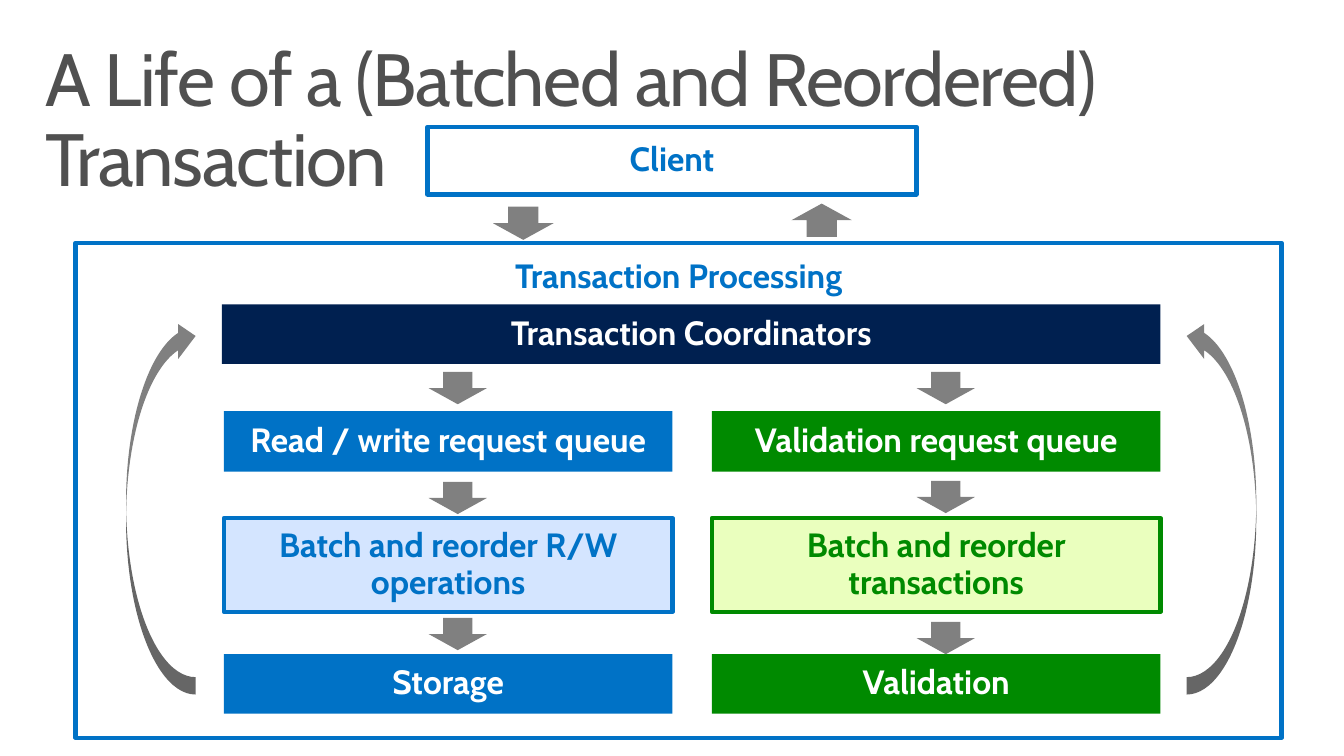
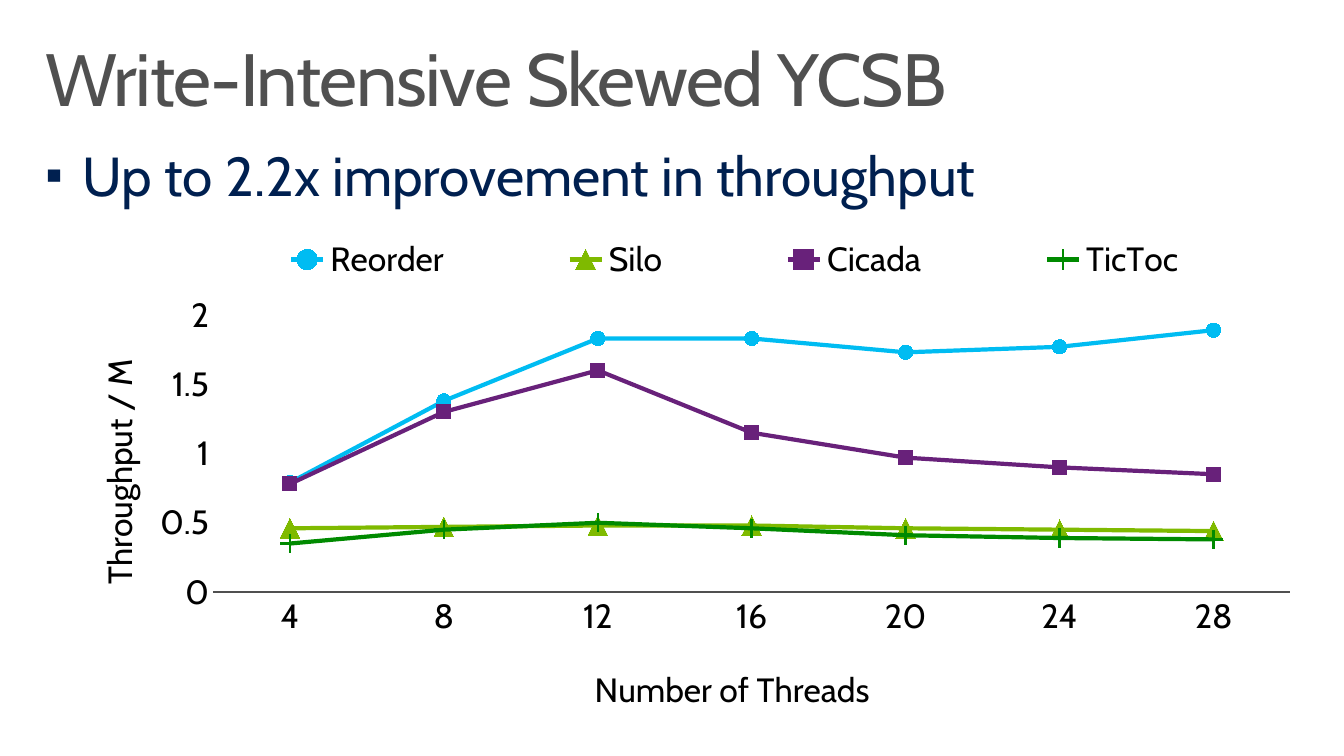
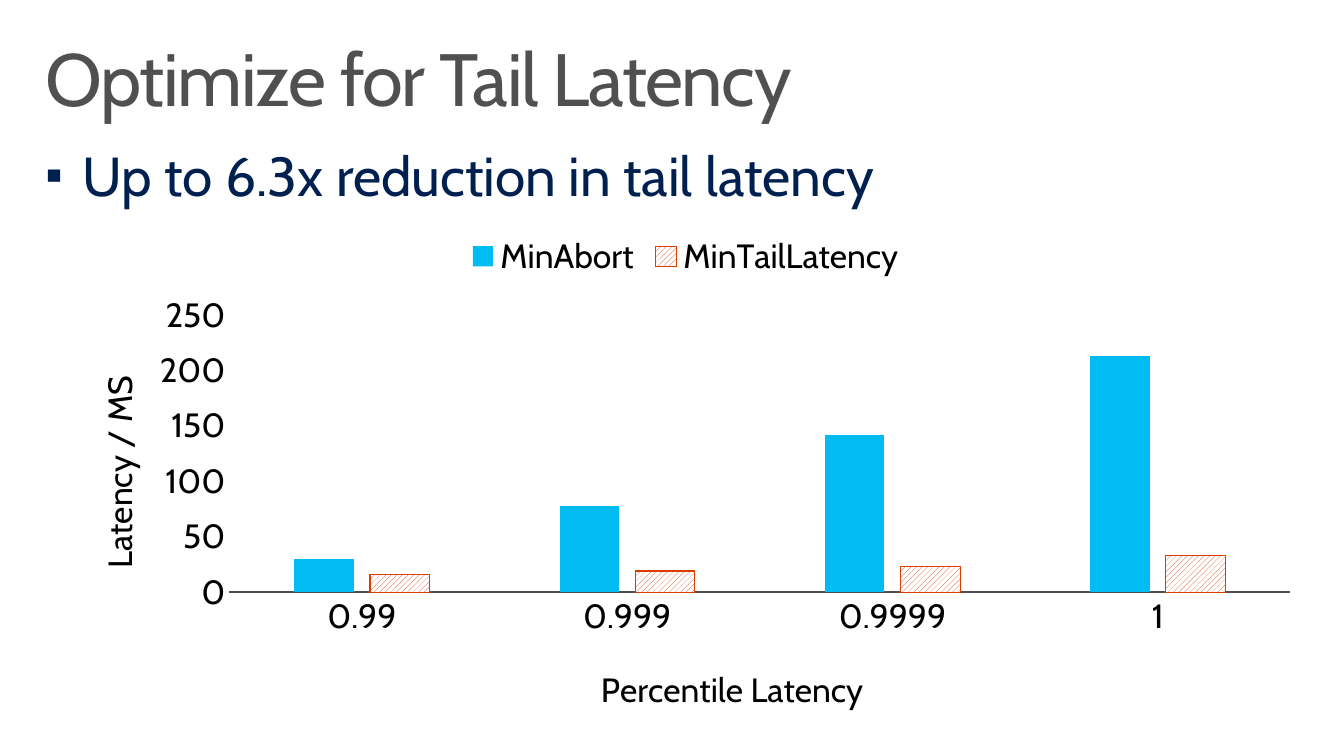
from dataclasses import dataclass

from lxml import etree
from pptx import Presentation
from pptx.chart.data import CategoryChartData
from pptx.dml.color import RGBColor
from pptx.enum.chart import XL_CHART_TYPE, XL_LEGEND_POSITION, XL_MARKER_STYLE, XL_TICK_MARK
from pptx.enum.dml import MSO_PATTERN
from pptx.enum.shapes import MSO_SHAPE
from pptx.enum.text import MSO_ANCHOR, MSO_AUTO_SIZE, PP_ALIGN
from pptx.oxml.ns import qn
from pptx.util import Inches, Pt

TITLE_ONLY, TITLE_AND_BODY = 5, 1
TOP, MIDDLE = MSO_ANCHOR.TOP, MSO_ANCHOR.MIDDLE
RECTANGLE = MSO_SHAPE.RECTANGLE
DOWN, UP = MSO_SHAPE.DOWN_ARROW, MSO_SHAPE.UP_ARROW
CURVED_LEFT, CURVED_RIGHT = MSO_SHAPE.CURVED_LEFT_ARROW, MSO_SHAPE.CURVED_RIGHT_ARROW
NO_TICKS = XL_TICK_MARK.NONE
LINE_CHART, COLUMN_CHART = XL_CHART_TYPE.LINE_MARKERS, XL_CHART_TYPE.COLUMN_CLUSTERED
CIRCLE, TRIANGLE = XL_MARKER_STYLE.CIRCLE, XL_MARKER_STYLE.TRIANGLE
SQUARE, PLUS = XL_MARKER_STYLE.SQUARE, XL_MARKER_STYLE.PLUS


@dataclass(frozen=True)
class Theme:
    """Colours, font and type sizes shared by all slides."""

    font: str = "Cabin"
    title_size: float = 52.9
    body_size: float = 39.2
    label_size: float = 24
    outline: float = 3
    gray: str = "505050"
    arrow: str = "808080"
    navy: str = "002050"
    blue: str = "0072C6"
    pale_blue: str = "D4E5FF"
    green: str = "008A00"
    pale_green: str = "EAFFBE"
    cyan: str = "00BCF2"
    lime: str = "7FBA00"
    purple: str = "68217A"
    orange: str = "DC3C00"
    white: str = "FFFFFF"
    black: str = "000000"


THEME = Theme()


def rgb(code):
    """Turn a hex code into a colour."""
    return RGBColor.from_string(code)


def place(shape, left, top, width, height):
    """Set a shape's position and size in inches."""
    shape.left, shape.top = Inches(left), Inches(top)
    shape.width, shape.height = Inches(width), Inches(height)


def set_font(font, size, color, bold=False):
    """Apply the theme font with a size and colour."""
    font.name = THEME.font
    font.size = Pt(size)
    font.bold = bold
    font.color.rgb = rgb(color)


def set_frame(frame, across, down, anchor):
    """Set insets, wrapping and anchor of a text frame."""
    frame.margin_left = frame.margin_right = Inches(across)
    frame.margin_top = frame.margin_bottom = Inches(down)
    frame.word_wrap = True
    frame.auto_size = MSO_AUTO_SIZE.NONE
    frame.vertical_anchor = anchor


def fill_placeholder(shape, text, size, color):
    """Write one left-aligned paragraph into a placeholder and return it."""
    frame = shape.text_frame
    frame.text = text
    set_frame(frame, 0.16, 0.1, TOP)
    para = frame.paragraphs[0]
    para.alignment = PP_ALIGN.LEFT
    para.space_before = Pt(0)
    set_font(para.runs[0].font, size, color)
    return para


def add_page(deck, layout, title):
    """Add a slide with its styled title."""
    page = deck.slides.add_slide(deck.slide_layouts[layout])
    place(page.shapes.title, 0.29, 0.32, 12.75, 0.98)
    para = fill_placeholder(page.shapes.title, title, THEME.title_size, THEME.gray)
    para.line_spacing = 0.9
    para.runs[0].font._element.set("spc", "-100")
    return page


def add_bullet(page, text):
    """Fill the body placeholder with one square-bulleted line."""
    body = page.placeholders[1]
    place(body, 0.29, 1.3, 12.74, 2.6)
    para = fill_placeholder(body, text, THEME.body_size, THEME.navy)
    props = para._p.get_or_add_pPr()
    props.set("marL", str(Inches(0.37)))
    props.set("indent", str(Inches(-0.37)))
    color = etree.SubElement(props, qn("a:buClr"))
    etree.SubElement(color, qn("a:srgbClr")).set("val", THEME.navy)
    etree.SubElement(props, qn("a:buSzPct")).set("val", "90000")
    etree.SubElement(props, qn("a:buFont")).set("typeface", "Arial")
    etree.SubElement(props, qn("a:buChar")).set("char", "▪")


def add_box(page, text, bounds, fill, color=THEME.white, line=None, anchor=MIDDLE):
    """Add a labelled rectangle."""
    box = page.shapes.add_shape(RECTANGLE, *map(Inches, bounds))
    box.shadow.inherit = False
    box.fill.solid()
    box.fill.fore_color.rgb = rgb(fill)
    if line:
        box.line.color.rgb = rgb(line)
        box.line.width = Pt(THEME.outline)
    else:
        box.line.fill.background()
    frame = box.text_frame
    frame.text = text
    set_frame(frame, 0.2, 0.16, anchor)
    para = frame.paragraphs[0]
    para.alignment = PP_ALIGN.CENTER
    para.line_spacing = 0.9
    set_font(para.runs[0].font, THEME.label_size, color, bold=True)


def add_arrow(page, kind, left, top, width=0.58, height=0.32, rotation=0):
    """Add a plain gray block arrow."""
    arrow = page.shapes.add_shape(kind, *map(Inches, (left, top, width, height)))
    arrow.shadow.inherit = False
    arrow.rotation = rotation
    arrow.fill.solid()
    arrow.fill.fore_color.rgb = rgb(THEME.arrow)
    arrow.line.fill.background()


def set_layout(element, index, inner=False, **lengths):
    """Give a chart part a manual layout in fractions of the chart."""
    for old in element.findall(qn("c:layout")):
        element.remove(old)
    layout = etree.Element(qn("c:layout"))
    manual = etree.SubElement(layout, qn("c:manualLayout"))
    if inner:
        etree.SubElement(manual, qn("c:layoutTarget")).set("val", "inner")
    for mode in ("xMode", "yMode"):
        etree.SubElement(manual, qn(f"c:{mode}")).set("val", "edge")
    for name, value in lengths.items():
        etree.SubElement(manual, qn(f"c:{name}")).set("val", str(value))
    element.insert(index, layout)


def style_axis(axis, title, x, y):
    """Style an axis and place its title."""
    axis.has_major_gridlines = False
    axis.major_tick_mark = axis.minor_tick_mark = NO_TICKS
    set_font(axis.tick_labels.font, THEME.label_size, THEME.black)
    frame = axis.axis_title.text_frame
    frame.text = title
    set_font(frame.paragraphs[0].runs[0].font, THEME.label_size, THEME.black)
    set_layout(axis.axis_title._element, 1, x=x, y=y)


def add_chart(page, kind, categories, series, titles, title_places, plot_left, top_value, step):
    """Add a chart with the shared axes, legend and plot area."""
    data = CategoryChartData()
    data.categories = categories
    for name, values in series:
        data.add_series(name, values)
    bounds = map(Inches, (0.55, 2.2, 12.5, 5))
    chart = page.shapes.add_chart(kind, *bounds, data).chart
    chart.has_title = False
    set_font(chart.font, THEME.label_size, THEME.black)
    chart.has_legend = True
    chart.legend.position = XL_LEGEND_POSITION.TOP
    chart.legend.include_in_layout = False
    set_font(chart.legend.font, THEME.label_size, THEME.black)
    for axis, title, (x, y) in zip((chart.category_axis, chart.value_axis), titles, title_places):
        style_axis(axis, title, x, y)
    chart.category_axis.format.line.color.rgb = rgb(THEME.gray)
    chart.category_axis.format.line.width = Pt(2)
    value_axis = chart.value_axis
    value_axis.format.line.fill.background()
    value_axis.minimum_scale, value_axis.maximum_scale = 0, top_value
    value_axis.major_unit = step
    value_axis.tick_labels.number_format = "General"
    value_axis.tick_labels.number_format_is_linked = False
    turned = value_axis.axis_title.text_frame._txBody.bodyPr
    turned.set("rot", "-5400000")
    turned.set("vert", "horz")
    plot_area = chart._chartSpace.chart.plotArea
    set_layout(plot_area, 0, True, x=plot_left, y=0.185, w=round(0.98 - plot_left, 3), h=0.55)
    return chart


def build_transaction(deck):
    """Build the transaction flow diagram."""
    page = add_page(deck, TITLE_ONLY, "A Life of a (Batched and Reordered) Transaction")
    add_box(page, "Client", (4.24, 1.26, 4.85, 0.67), THEME.white, THEME.blue, THEME.blue)
    add_box(page, "Transaction Processing", (0.75, 2.41, 11.96, 4.91),
            THEME.white, THEME.blue, THEME.blue, TOP)
    add_box(page, "Transaction Coordinators", (2.2, 3.02, 9.31, 0.59), THEME.navy)
    columns = (
        (2.22, THEME.blue, THEME.pale_blue, (3.69, 4.78, 6.13),
         ("Read / write request queue", "Batch and reorder R/W operations", "Storage")),
        (7.06, THEME.green, THEME.pale_green, (3.69, 4.77, 6.17),
         ("Validation request queue", "Batch and reorder transactions", "Validation")),
    )
    width = 4.45
    for left, strong, pale, arrow_tops, (queue, batch, target) in columns:
        add_box(page, queue, (left, 4.08, width, 0.6), strong)
        add_box(page, batch, (left, 5.14, width, 0.93), pale, strong, strong)
        add_box(page, target, (left, 6.49, width, 0.59), strong)
        for top in arrow_tops:
            add_arrow(page, DOWN, left + 2.03, top)
    for kind, left in ((CURVED_RIGHT, 11.77), (CURVED_LEFT, 1.25)):
        add_arrow(page, kind, left, 3.16, 0.69, 3.73, 180)
    add_arrow(page, DOWN, 4.89, 2.05, 0.6, 0.33)
    add_arrow(page, UP, 7.85, 2.02, 0.6, 0.33)


def build_throughput(deck):
    """Build the throughput line chart."""
    page = add_page(deck, TITLE_AND_BODY, "Write-Intensive Skewed YCSB")
    add_bullet(page, "Up to 2.2x improvement in throughput")
    series = (
        ("Reorder", (0.79, 1.38, 1.83, 1.83, 1.73, 1.77, 1.89)),
        ("Silo", (0.46, 0.47, 0.48, 0.48, 0.46, 0.45, 0.44)),
        ("Cicada", (0.78, 1.3, 1.6, 1.15, 0.97, 0.9, 0.85)),
        ("TicToc", (0.35, 0.45, 0.5, 0.46, 0.41, 0.39, 0.38)),
    )
    chart = add_chart(page, LINE_CHART, range(4, 29, 4), series,
                      ("Number of Threads", "Throughput / M"),
                      ((0.423, 0.87), (0.027, 0.26)), 0.125, 2, 0.5)
    set_layout(chart.legend._element, 1, x=0.096, y=0.03, w=0.886, h=0.09)
    styles = (
        (THEME.cyan, CIRCLE, 10),
        (THEME.lime, TRIANGLE, 14),
        (THEME.purple, SQUARE, 10),
        (THEME.green, PLUS, 13),
    )
    for line, (color, marker, size) in zip(chart.plots[0].series, styles):
        line.smooth = False
        line.format.line.color.rgb = rgb(color)
        line.format.line.width = Pt(THEME.outline)
        line.marker.style = marker
        line.marker.size = size
        line.marker.format.fill.solid()
        line.marker.format.fill.fore_color.rgb = rgb(color)
        line.marker.format.line.color.rgb = rgb(color)


def build_latency(deck):
    """Build the tail latency column chart."""
    page = add_page(deck, TITLE_AND_BODY, "Optimize for Tail Latency")
    add_bullet(page, "Up to 6.3x reduction in tail latency")
    series = (("MinAbort", (30, 78, 142, 213)), ("MinTailLatency", (16, 19, 23, 33)))
    chart = add_chart(page, COLUMN_CHART, (0.99, 0.999, 0.9999, 1), series,
                      ("Percentile Latency", "Latency / MS"),
                      ((0.428, 0.87), (0.027, 0.294)), 0.138, 250, 50)
    labels = chart.category_axis.tick_labels
    labels.number_format = "0.00%"
    labels.number_format_is_linked = False
    plot = chart.plots[0]
    plot.vary_by_categories = False
    plot.gap_width, plot.overlap = 219, -27
    abort, tail = plot.series
    abort.format.fill.solid()
    abort.format.fill.fore_color.rgb = rgb(THEME.cyan)
    tail.format.fill.patterned()
    tail.format.fill.pattern = MSO_PATTERN.WIDE_UPWARD_DIAGONAL
    tail.format.fill.fore_color.rgb = rgb(THEME.orange)
    tail.format.fill.back_color.rgb = rgb(THEME.white)
    tail.format.line.color.rgb = rgb(THEME.orange)
    tail.format.line.width = Pt(0.75)


def main():
    """Build and save the deck."""
    deck = Presentation()
    deck.slide_width, deck.slide_height = Inches(13.33), Inches(7.5)
    build_transaction(deck)
    build_throughput(deck)
    build_latency(deck)
    deck.save("out.pptx")


if __name__ == "__main__":
    main()
